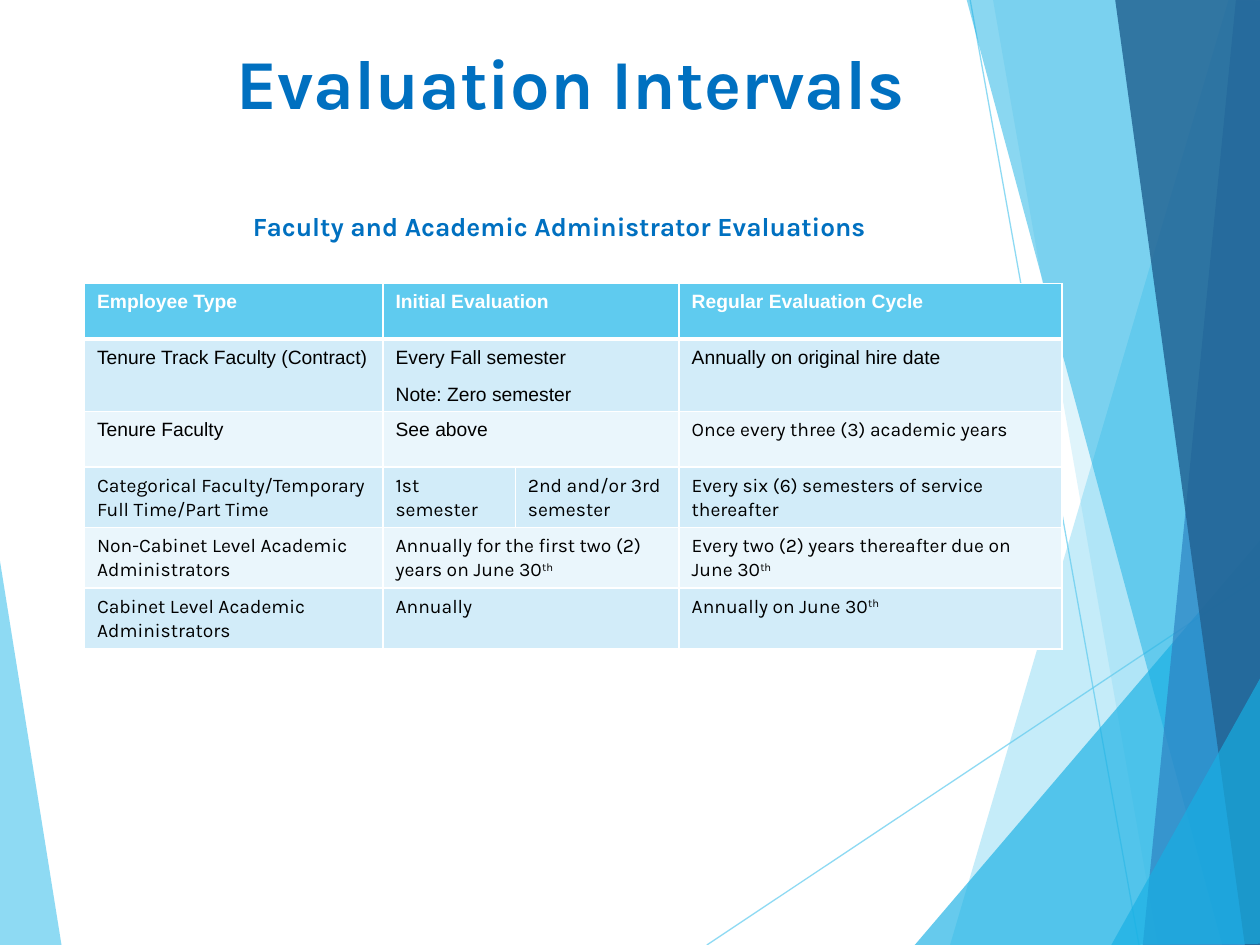
from dataclasses import dataclass

from lxml import etree
from pptx import Presentation
from pptx.dml.color import RGBColor
from pptx.enum.shapes import MSO_CONNECTOR
from pptx.enum.text import MSO_ANCHOR, PP_ALIGN
from pptx.oxml.ns import qn
from pptx.util import Inches, Pt

SKY, CYAN, BLUE, NAVY = "5FCBEF", "17B0E4", "2E83C3", "226292"
WHITE, BLACK, HEADING = "FFFFFF", "000000", "0070C0"
BANDS = ("D2ECF9", "EAF6FC")


@dataclass
class Facet:
    points: list[tuple[float, float]]
    color: str
    alpha: int


@dataclass
class Ray:
    start: tuple[float, float]
    end: tuple[float, float]


@dataclass
class Entry:
    """A table cell; ^ starts a superscript and a newline a paragraph."""
    text: str
    font: str = "Karla"
    span: int = 1


LEFT_FACET = Facet([(-0.01, 4.39), (0.49, 7.51), (-0.01, 7.5)], SKY, 70)
RAYS = [Ray((5.61, 7.5), (10.01, 4.57)), Ray((7.7, 0), (9.04, 7.5))]
RIGHT_FACETS = [
    Facet([(9.75, 0), (7.54, 7.5), (10.02, 7.51), (10.01, 0.01)], SKY, 36),
    Facet([(7.88, -0.01), (9.19, 7.5), (10.01, 7.5), (10.01, -0.01)], SKY, 20),
    Facet([(7.26, 7.5), (10, 4.29), (10.01, 7.5)], CYAN, 66),
    Facet([(7.67, -0.01), (9.7, 7.5), (10.01, 7.49), (10.01, -0.01)], CYAN, 50),
    Facet([(9.81, -0.01), (9.07, 7.5), (10.01, 7.5), (10, -0.01)], BLUE, 70),
    Facet([(8.85, -0.01), (9.88, 7.5), (10.02, 7.5), (10, -0.01)], NAVY, 82),
    Facet([(8.82, 7.5), (10.02, 5.35), (10.02, 7.49)], CYAN, 66),
]

COL_WIDTHS = (2.37, 1.05, 1.3, 3.04)
ROW_HEIGHTS = (0.44, 0.44, 0.44, 0.43, 0.42, 0.39)
ROWS = [
    [Entry("Employee Type", "Arial"), Entry("Initial Evaluation", "Arial", 2),
     Entry("Regular Evaluation Cycle", "Arial")],
    [Entry("Tenure Track Faculty (Contract)", "Arial"),
     Entry("Every Fall semester\nNote: Zero semester", "Arial", 2),
     Entry("Annually on original hire date", "Arial")],
    [Entry("Tenure Faculty", "Arial"), Entry("See above", "Arial", 2),
     Entry("Once every three (3) academic years")],
    [Entry("Categorical Faculty/Temporary Full Time/Part Time"),
     Entry("1st semester"), Entry("2nd and/or 3rd semester"),
     Entry("Every six (6) semesters of service thereafter")],
    [Entry("Non-Cabinet Level Academic Administrators"),
     Entry("Annually for the first two (2) years on June 30^th", span=2),
     Entry("Every two (2) years thereafter due on June 30^th")],
    [Entry("Cabinet Level Academic Administrators"), Entry("Annually", span=2),
     Entry("Annually on June 30^th")],
]


def rgb(color: str) -> RGBColor:
    return RGBColor.from_string(color)


def set_alpha(element, percent: int) -> None:
    clr = next(element.iter(qn("a:srgbClr")))
    etree.SubElement(clr, qn("a:alpha"), val=str(percent * 1000))


def add_facet(s, facet: Facet) -> None:
    points = [(Inches(x), Inches(y)) for x, y in facet.points]
    builder = s.shapes.build_freeform(*points[0])
    builder.add_line_segments(points[1:], close=True)
    sp = builder.convert_to_shape()
    sp.shadow.inherit = False
    sp.fill.solid()
    sp.fill.fore_color.rgb = rgb(facet.color)
    sp.line.fill.background()
    set_alpha(sp._element.spPr, facet.alpha)


def add_ray(s, ray: Ray) -> None:
    ends = [Inches(v) for v in ray.start + ray.end]
    line = s.shapes.add_connector(MSO_CONNECTOR.STRAIGHT, *ends)
    line.line.width = Pt(0.75)
    line.line.color.rgb = rgb(SKY)
    spPr = line._element.spPr
    set_alpha(spPr, 70)
    etree.SubElement(spPr, qn("a:effectLst"))


def write(tf, text: str, *, size: float, font: str, color: str, bold=False,
          align=PP_ALIGN.LEFT, line_spacing=None, space_after=None) -> None:
    tf.word_wrap = True
    for i, line in enumerate(text.split("\n")):
        p = tf.add_paragraph() if i else tf.paragraphs[0]
        p.alignment = align
        p.line_spacing = line_spacing
        p.space_after = space_after
        for j, part in enumerate(line.split("^")):
            r = p.add_run()
            r.text = part
            r.font.size, r.font.name, r.font.bold = Pt(size), font, bold
            r.font.color.rgb = rgb(color)
            if j:
                r._r.get_or_add_rPr().set("baseline", "30000")


def add_heading(s, text: str, left: float, top: float, width: float,
                height: float, size: float) -> None:
    box = s.shapes.add_textbox(*map(Inches, (left, top, width, height)))
    box.text_frame.vertical_anchor = MSO_ANCHOR.MIDDLE
    write(box.text_frame, text, size=size, font="Karla", color=HEADING,
          bold=True, align=PP_ALIGN.CENTER)


def set_borders(cell, bottom: float) -> None:
    tcPr = cell._tc.get_or_add_tcPr()
    widths = {"a:lnL": 1, "a:lnR": 1, "a:lnT": 1, "a:lnB": bottom}
    for i, (tag, width) in enumerate(widths.items()):
        ln = etree.Element(qn(tag), w=str(Pt(width)))
        fill = etree.SubElement(ln, qn("a:solidFill"))
        etree.SubElement(fill, qn("a:srgbClr"), val=WHITE)
        tcPr.insert(i, ln)


def add_intervals_table(s) -> None:
    frame = s.shapes.add_table(
        len(ROWS), len(COL_WIDTHS), Inches(0.67), Inches(2.25),
        Inches(sum(COL_WIDTHS)), Inches(sum(ROW_HEIGHTS)))
    table = frame.table
    for column, width in zip(table.columns, COL_WIDTHS):
        column.width = Inches(width)
    for i, entries in enumerate(ROWS):
        table.rows[i].height = Inches(ROW_HEIGHTS[i])
        header = i == 0
        for cell in table.rows[i].cells:
            cell.fill.solid()
            cell.fill.fore_color.rgb = rgb(SKY if header else BANDS[(i - 1) % 2])
            set_borders(cell, bottom=3 if header else 1)
        col = 0
        for entry in entries:
            cell = table.cell(i, col)
            if entry.span > 1:
                cell.merge(table.cell(i, col + entry.span - 1))
            write(cell.text_frame, entry.text, size=11, font=entry.font,
                  color=WHITE if header else BLACK, bold=header,
                  line_spacing=1.07, space_after=Pt(8))
            col += entry.span


def main() -> None:
    prs = Presentation()
    prs.slide_width, prs.slide_height = Inches(10), Inches(7.5)
    s = prs.slides.add_slide(prs.slide_layouts[6])
    add_facet(s, LEFT_FACET)
    for ray in RAYS:
        add_ray(s, ray)
    for facet in RIGHT_FACETS:
        add_facet(s, facet)
    add_intervals_table(s)
    add_heading(s, "Faculty and Academic Administrator Evaluations",
                0.97, 1.58, 6.94, 0.42, size=15)
    add_heading(s, "Evaluation Intervals", 0.65, 0.25, 7.75, 0.79, size=40)
    prs.save("out.pptx")


if __name__ == "__main__":
    main()
